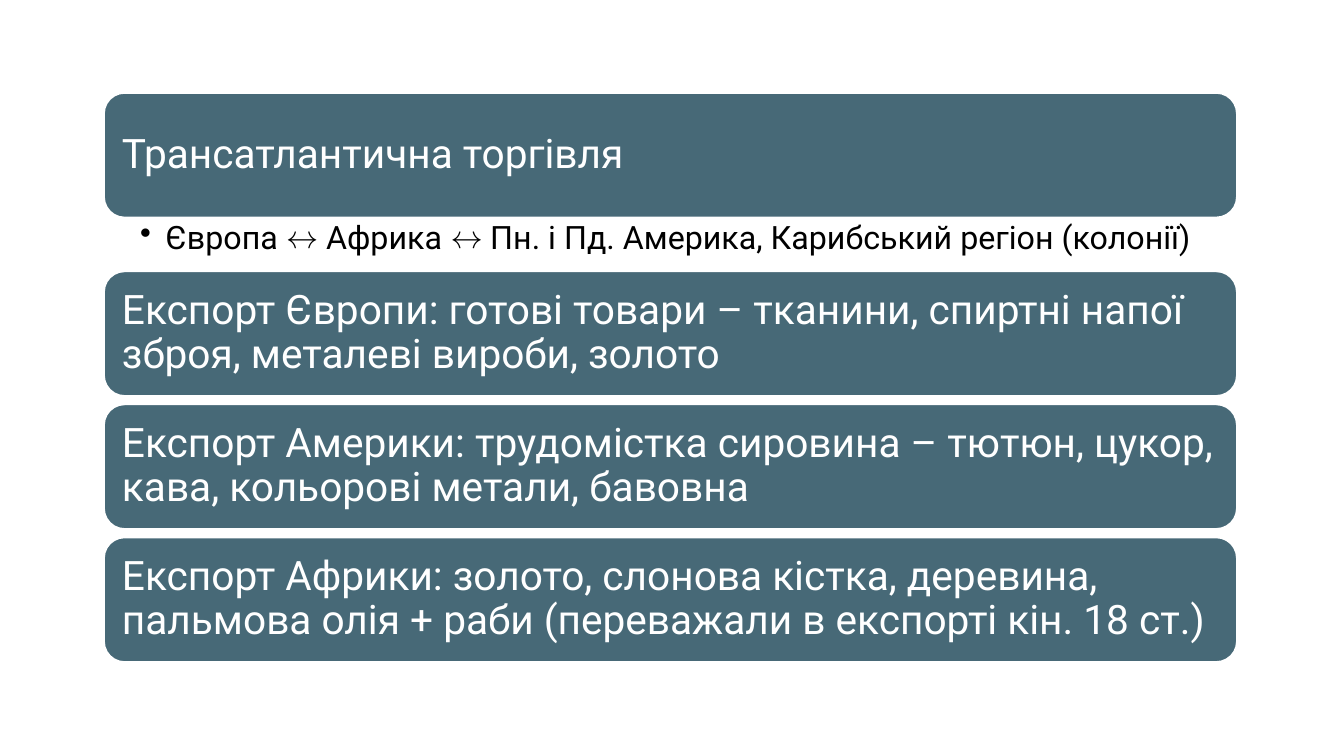
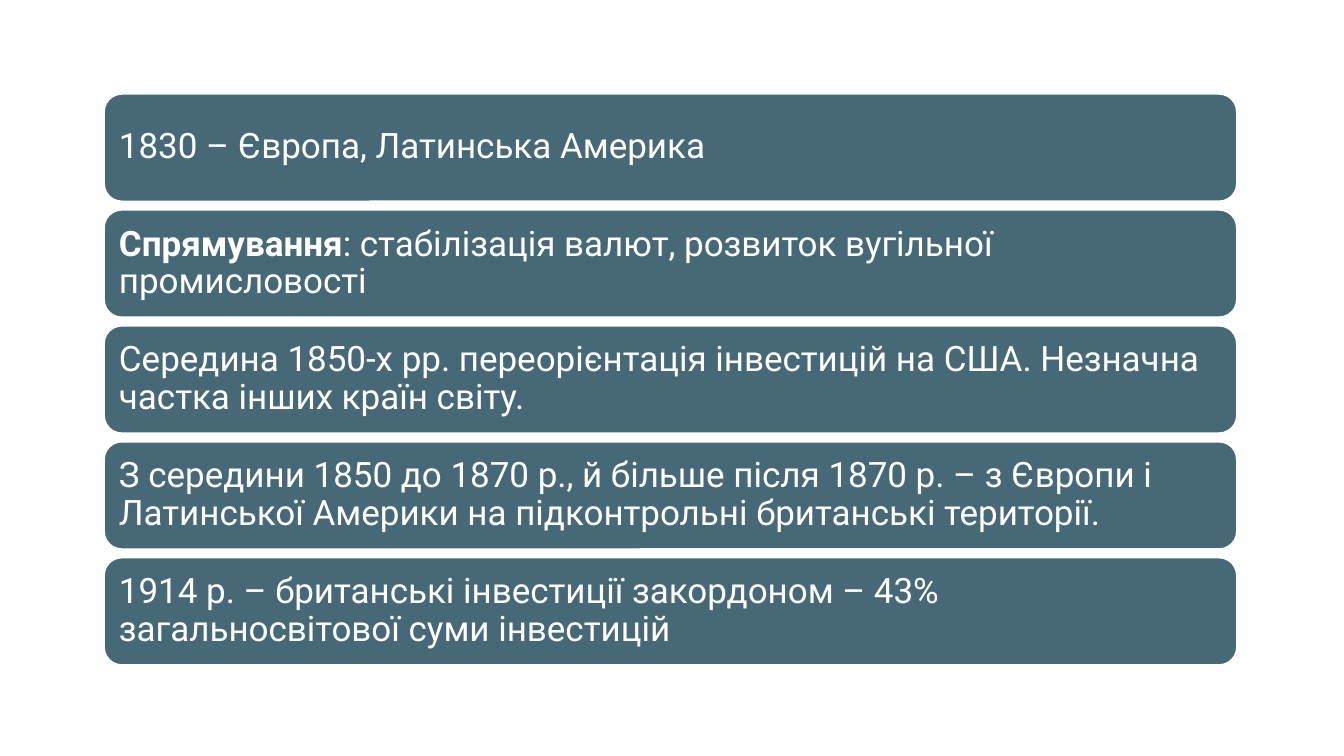
from lxml.etree import SubElement
from pptx import Presentation
from pptx.dml.color import RGBColor
from pptx.enum.shapes import MSO_SHAPE
from pptx.enum.text import MSO_ANCHOR, PP_ALIGN
from pptx.oxml.ns import qn
from pptx.util import Inches, Pt

# Shared look
FONT = "Roboto"
TEAL, WHITE, BLACK = "476977", "FFFFFF", "000000"
LEFT, WIDTH = 1.03, 11.24


def paint(form, color):
    form.solid()
    form.fore_color.rgb = RGBColor.from_string(color)


def write(frame, runs, size, color, pads):
    """Fill a frame with one paragraph of (text, bold) runs."""
    frame.word_wrap = True
    frame.margin_left, frame.margin_top, frame.margin_right, frame.margin_bottom = (
        Inches(pad) for pad in pads)
    para = frame.paragraphs[0]
    para.alignment = PP_ALIGN.LEFT
    para.line_spacing = 0.9
    for text, bold in runs:
        run = para.add_run()
        run.text = text
        run.font.name = FONT
        run.font.size = Pt(size)
        run.font.bold = bold
        paint(run.font.fill, color)
    return para


# Each slide: bar height, gap, text size, inset, and (top, bars) stacks
trade = [
    (0.92, [[("Трансатлантична торгівля", False)]]),
    (2.69, [
        [("Експорт Європи: готові товари – тканини, спиртні напої зброя, "
          "металеві вироби, золото", False)],
        [("Експорт Америки: трудомістка сировина – тютюн, цукор, кава, "
          "кольорові метали, бавовна", False)],
        [("Експорт Африки: золото, слонова кістка, деревина, пальмова олія "
          "+ раби (переважали в експорті кін. 18 ст.)", False)],
    ]),
]
invest = [
    (0.93, [
        [("1830 – Європа, Латинська Америка", False)],
        [("Спрямування", True),
         (": стабілізація валют, розвиток вугільної промисловості", False)],
        [("Середина 1850-х рр. переорієнтація інвестицій на США. "
          "Незначна частка інших країн світу.", False)],
        [("З середини 1850 до 1870 р., й більше після 1870 р. – з Європи і "
          "Латинської Америки на підконтрольні британські території.", False)],
        [("1914 р. – британські інвестиції закордоном – 43% "
          "загальносвітової суми інвестицій", False)],
    ]),
]
pages = [(1.24, 0.08, 29, 0.12, trade), (1.07, 0.08, 25, 0.1, invest)]

deck = Presentation()
deck.slide_width, deck.slide_height = Inches(13.33), Inches(7.5)
blank = deck.slide_layouts[6]

# Stacks of rounded bars
for high, gap, size, pad, stacks in pages:
    slide = deck.slides.add_slide(blank)
    for top, bars in stacks:
        for row, runs in enumerate(bars):
            bar = slide.shapes.add_shape(
                MSO_SHAPE.ROUNDED_RECTANGLE, Inches(LEFT),
                Inches(top + row * (high + gap)), Inches(WIDTH), Inches(high))
            bar.shadow.inherit = False
            paint(bar.fill, TEAL)
            paint(bar.line.fill, WHITE)
            bar.line.width = Pt(1.5)
            bar.text_frame.vertical_anchor = MSO_ANCHOR.MIDDLE
            write(bar.text_frame, runs, size, WHITE, [pad] * 4)

# Bulleted route under the first bar of the trade slide
route = deck.slides[0].shapes.add_textbox(
    Inches(LEFT), Inches(2.16), Inches(WIDTH), Inches(0.53))
para = write(
    route.text_frame,
    [("Європа ↔ Африка ↔ Пн. і Пд. Америка, Карибський регіон (колонії)", False)],
    23, BLACK, (0.36, 0.04, 0.23, 0.04))
para.level = 1
props = para._p.get_or_add_pPr()
props.set("marL", str(Inches(0.25)))
props.set("indent", str(-Inches(0.25)))
SubElement(props, qn("a:buChar")).set("char", "•")

deck.save("out.pptx")
